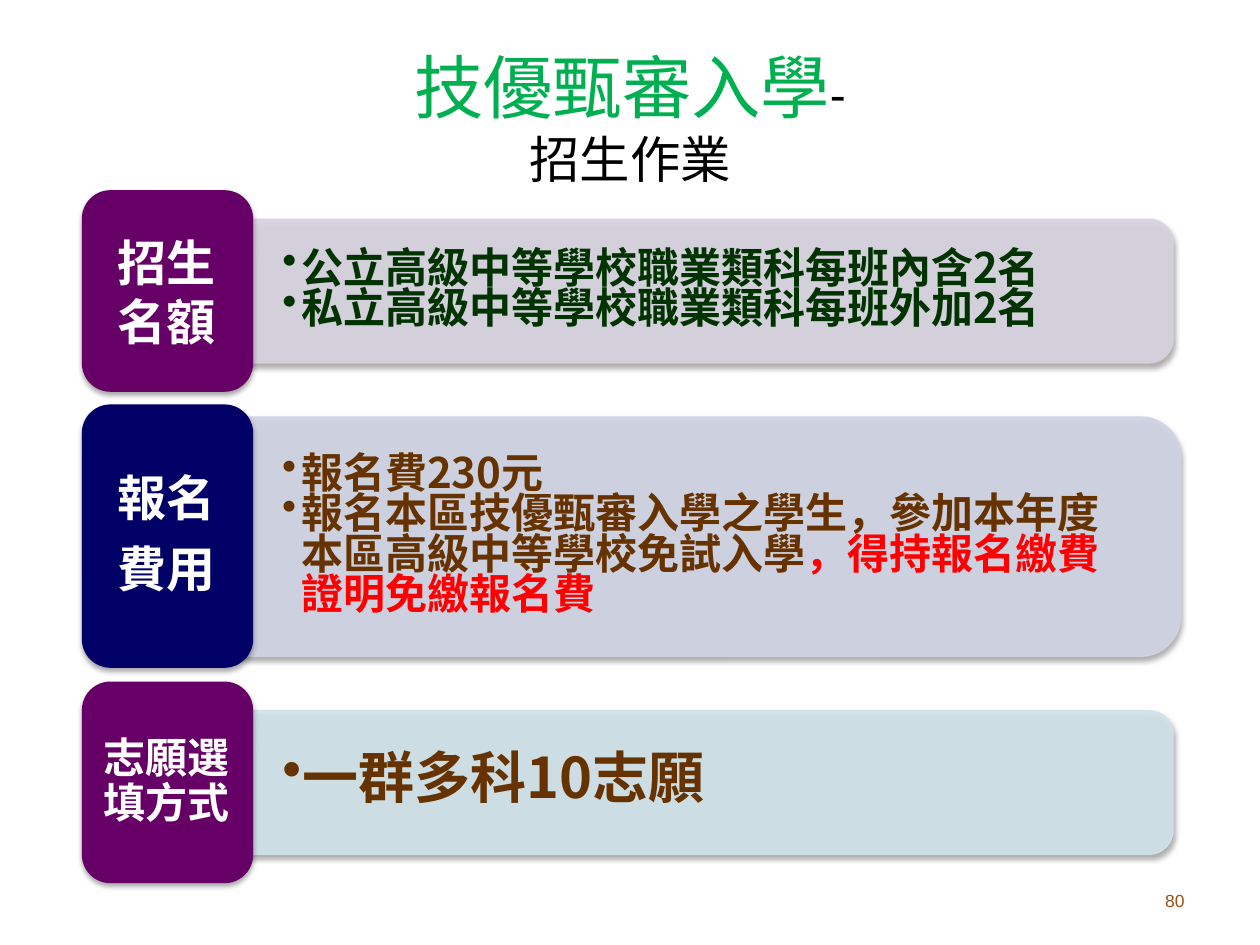
from lxml import etree
from pptx import Presentation
from pptx.dml.color import RGBColor
from pptx.enum.shapes import MSO_SHAPE
from pptx.enum.text import MSO_ANCHOR, MSO_AUTO_SIZE, PP_ALIGN
from pptx.oxml.ns import qn
from pptx.util import Inches, Pt

ROUNDED = MSO_SHAPE.ROUNDED_RECTANGLE
TOP_ROUNDED = MSO_SHAPE.ROUND_2_SAME_RECTANGLE
MIDDLE = MSO_ANCHOR.MIDDLE
NO_AUTOFIT = MSO_AUTO_SIZE.NONE
CENTER, RIGHT = PP_ALIGN.CENTER, PP_ALIGN.RIGHT
CJK = "Noto Sans CJK SC"
LABEL_LEFT, LABEL_WIDTH, PANEL_LEFT = 0.65, 1.36, 1.93


def color(hex_value):
    return RGBColor.from_string(hex_value)


def style_run(run, size, hex_value, font=CJK, bold=False):
    run.font.size = Pt(size)
    run.font.bold = bold
    run.font.name = font
    run.font.color.rgb = color(hex_value)
    if font == CJK:
        etree.SubElement(run.font._element, qn("a:ea"), typeface=CJK)


def set_alpha(color_format_fill):
    for rgb in color_format_fill.iter(qn("a:srgbClr")):
        etree.SubElement(rgb, qn("a:alpha"), val="90000")


def add_shadow(shape):
    shape.shadow.inherit = False
    effects = shape._element.spPr.find(qn("a:effectLst"))
    shadow = etree.SubElement(effects, qn("a:outerShdw"), blurRad=str(Pt(3.1)),
                              dist=str(Pt(1.8)), dir="5400000", rotWithShape="0")
    black = etree.SubElement(shadow, qn("a:srgbClr"), val="000000")
    etree.SubElement(black, qn("a:alpha"), val="35000")


def add_text_frame(slide, left, top, width, height, inset_x, inset_y):
    box = slide.shapes.add_textbox(Inches(left), Inches(top), Inches(width), Inches(height))
    frame = box.text_frame
    frame.word_wrap = True
    frame.vertical_anchor = MIDDLE
    frame.margin_left = frame.margin_right = Inches(inset_x)
    frame.margin_top = frame.margin_bottom = Inches(inset_y)
    return frame


def add_bullet(paragraph):
    properties = paragraph._p.get_or_add_pPr()
    properties.set("marL", str(Inches(0.19)))
    properties.set("indent", str(Inches(-0.15)))
    etree.SubElement(properties, qn("a:buChar"), char="•")


def add_title(slide, left, top, width, height):
    title = slide.shapes.title
    title.left, title.top = Inches(left), Inches(top)
    title.width, title.height = Inches(width), Inches(height)
    frame = title.text_frame
    frame.auto_size = NO_AUTOFIT
    frame.vertical_anchor = MIDDLE
    heading = frame.paragraphs[0]
    heading.alignment = CENTER
    name = heading.add_run()
    name.text = "技優甄審入學"
    style_run(name, 39.6, "00B050", "Calibri")
    dash = heading.add_run()
    dash.text = "-"
    style_run(dash, 28.8, "000000", "Calibri")
    heading.add_line_break()
    topic = heading.add_run()
    topic.text = "招生作業"
    style_run(topic, 28.8, "000000")


def add_panel(slide, top, width, height, fill, size, items):
    center_x, center_y = PANEL_LEFT + width / 2, top + height / 2
    panel = slide.shapes.add_shape(
        TOP_ROUNDED, Inches(center_x - height / 2), Inches(center_y - width / 2),
        Inches(height), Inches(width))
    panel.rotation = 90
    panel.fill.solid()
    panel.fill.fore_color.rgb = color(fill)
    panel.line.color.rgb = color(fill)
    panel.line.width = Pt(0.75)
    set_alpha(panel._element.spPr)
    add_shadow(panel)

    frame = add_text_frame(slide, PANEL_LEFT, top + 0.06, width - 0.07, height - 0.12, 0.27, 0.14)
    for index, item in enumerate(items):
        paragraph = frame.add_paragraph() if index else frame.paragraphs[0]
        paragraph.line_spacing = 0.8
        add_bullet(paragraph)
        for text, hex_value in item:
            run = paragraph.add_run()
            run.text = text
            style_run(run, size, hex_value, bold=True)


def add_label(slide, top, height, fill, size, lines, spacing, gap, inset):
    label = slide.shapes.add_shape(ROUNDED, Inches(LABEL_LEFT), Inches(top),
                                   Inches(LABEL_WIDTH), Inches(height))
    label.fill.solid()
    label.fill.fore_color.rgb = color(fill)
    label.line.fill.background()
    add_shadow(label)

    frame = add_text_frame(slide, LABEL_LEFT + 0.06, top + 0.07, LABEL_WIDTH - 0.13,
                           height - 0.14, *inset)
    frame.text = "\n".join(lines)
    for paragraph in frame.paragraphs:
        paragraph.alignment = CENTER
        paragraph.line_spacing = spacing
        paragraph.space_after = Pt(gap)
        style_run(paragraph.runs[0], size, "FFFFFF", bold=True)


def add_page_number(slide, left, top, width, height):
    frame = add_text_frame(slide, left, top, width, height, 0.1, 0.05)
    frame.text = "80"
    frame.paragraphs[0].alignment = RIGHT
    style_run(frame.paragraphs[0].runs[0], 10, "9A5315", "Arial")


def main():
    presentation = Presentation()
    presentation.slide_width, presentation.slide_height = Inches(10), Inches(7.5)
    slide = presentation.slides.add_slide(presentation.slide_layouts[5])
    add_title(slide, 0.5, 0.46, 9, 0.93)

    green, brown, red = "003300", "663300", "FF0000"
    add_panel(slide, 1.74, 7.38, 1.14, "D8D3E0", 24, [
        [("公立高級中等學校職業類科每班內含2名", green)],
        [("私立高級中等學校職業類科每班外加2名", green)]])
    add_label(slide, 1.51, 1.6, "660066", 28, ["招生", "名額"], 1, 0, (0.12, 0.06))

    add_panel(slide, 3.31, 7.44, 1.9, "D1D4E5", 24, [
        [("報名費230元", brown)],
        [("報名本區技優甄審入學之學生，參加本年度本區高級中等學校免試入學", brown),
         ("，得持報名繳費證明免繳報名費", red)]])
    add_label(slide, 3.21, 2.09, "000066", 28, ["報名", "費用"], 0.9, 10, (0.12, 0.06))

    add_panel(slide, 5.64, 7.38, 1.14, "D0E3EA", 32, [[("一群多科10志願", brown)]])
    add_label(slide, 5.41, 1.6, "660066", 24, ["志願選填方式"], 0.9, 8, (0.1, 0.05))

    add_page_number(slide, 7.17, 6.95, 2.33, 0.4)
    presentation.save("out.pptx")


if __name__ == "__main__":
    main()
